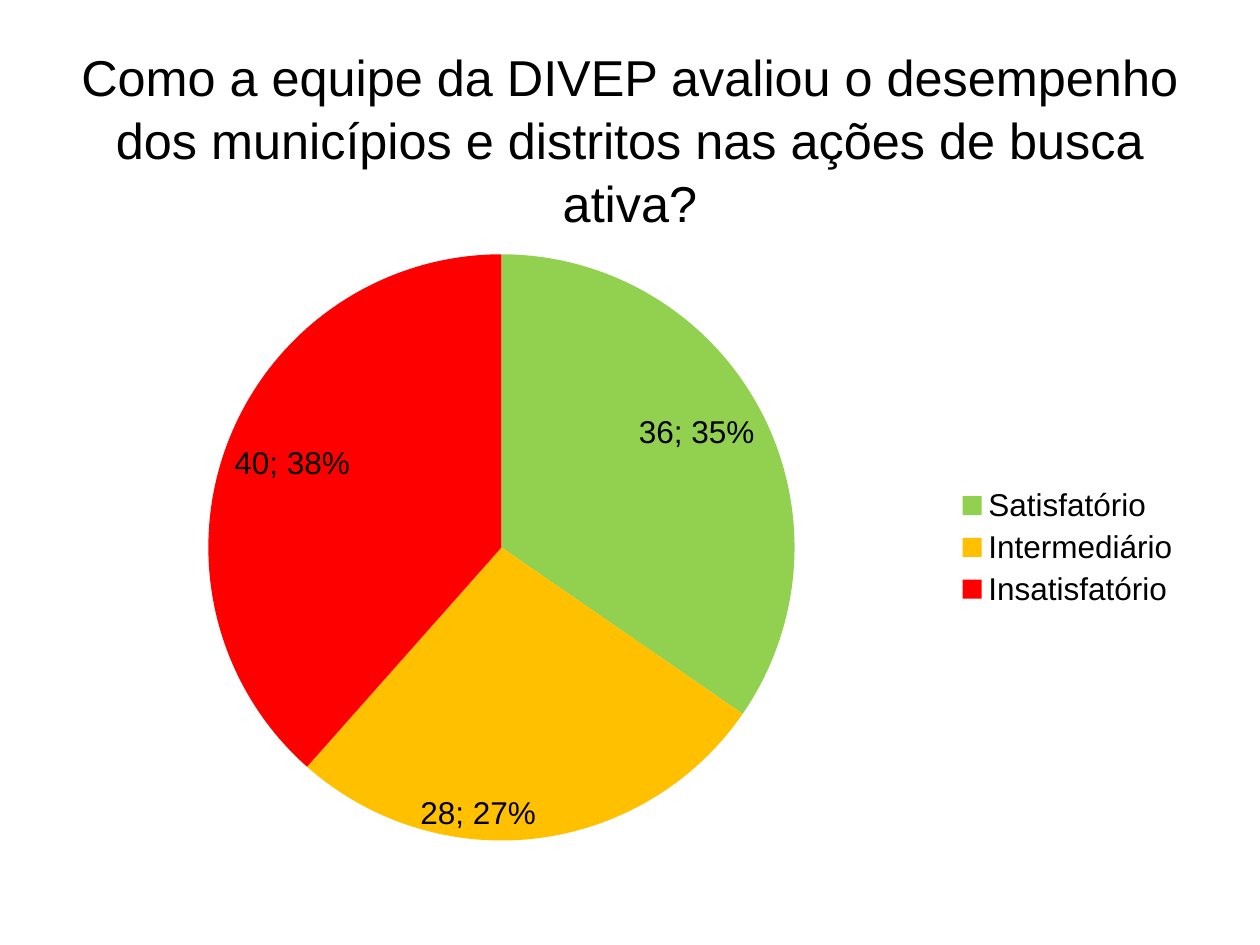
from dataclasses import dataclass

import pptx
import pptx.chart.data
import pptx.dml.color
import pptx.enum.chart
import pptx.enum.text
import pptx.oxml
import pptx.oxml.ns
import pptx.util

Inches = pptx.util.Inches


@dataclass(frozen=True)
class Theme:
    font: str = "Arial"
    text: str = "000000"
    title_size: float = 28.8
    chart_size: float = 18


THEME = Theme()
TITLE = ("Como a equipe da DIVEP avaliou o desempenho dos municípios "
         "e distritos nas ações de busca ativa?")
# Rating: (count, slice colour)
RATINGS = {
    "Satisfatório": (36, "92D050"),
    "Intermediário": (28, "FFC000"),
    "Insatisfatório": (40, "FF0000"),
}
# Plot area as fractions of the chart frame
PLOT_LAYOUT = {"x": 0.13, "y": 0.03, "w": 0.52, "h": 0.94}


def rgb(value):
    return pptx.dml.color.RGBColor.from_string(value)


def style_font(font, size):
    font.name = THEME.font
    font.size = pptx.util.Pt(size)
    font.color.rgb = rgb(THEME.text)


def add_title(page, text):
    box = page.shapes.add_textbox(Inches(0.5), Inches(0.3), Inches(9), Inches(1.25))
    frame = box.text_frame
    frame.word_wrap = True
    frame.vertical_anchor = pptx.enum.text.MSO_ANCHOR.TOP
    para = frame.paragraphs[0]
    para.text = text
    para.alignment = pptx.enum.text.PP_ALIGN.CENTER
    para.line_spacing = 1.04
    style_font(para.font, THEME.title_size)


def place_plot(chart, fractions):
    """Fix the inner plot area so that the pie keeps its size."""
    plot_area = chart.plots[0]._element.getparent()
    for old in plot_area.findall(pptx.oxml.ns.qn("c:layout")):
        plot_area.remove(old)
    sides = "".join(f'<c:{key} val="{value}"/>' for key, value in fractions.items())
    plot_area.insert(0, pptx.oxml.parse_xml(
        f'<c:layout {pptx.oxml.ns.nsdecls("c")}><c:manualLayout>'
        '<c:layoutTarget val="inner"/><c:xMode val="edge"/><c:yMode val="edge"/>'
        f'{sides}</c:manualLayout></c:layout>'))


def add_labels(plot):
    plot.has_data_labels = True
    labels = plot.data_labels
    labels.show_value = True
    labels.show_percentage = True
    labels.position = pptx.enum.chart.XL_LABEL_POSITION.INSIDE_END
    style_font(labels.font, THEME.chart_size)
    # The separator belongs just after showBubbleSize
    separator = pptx.oxml.parse_xml(
        f'<c:separator {pptx.oxml.ns.nsdecls("c")}>; </c:separator>')
    labels._element.find(pptx.oxml.ns.qn("c:showBubbleSize")).addnext(separator)


def add_pie(page, ratings):
    data = pptx.chart.data.CategoryChartData()
    data.categories = list(ratings)
    data.add_series("Series 1", [count for count, _ in ratings.values()])
    chart = page.shapes.add_chart(
        pptx.enum.chart.XL_CHART_TYPE.PIE,
        Inches(0.47), Inches(1.87), Inches(9), Inches(4.95), data).chart
    chart.has_title = False
    style_font(chart.font, THEME.chart_size)

    # Legend
    chart.has_legend = True
    chart.legend.position = pptx.enum.chart.XL_LEGEND_POSITION.RIGHT
    chart.legend.include_in_layout = False
    style_font(chart.legend.font, THEME.chart_size)

    # Slices and labels
    plot = chart.plots[0]
    plot.vary_by_categories = True
    for index, (_, color) in enumerate(ratings.values()):
        fill = plot.series[0].points[index].format.fill
        fill.solid()
        fill.fore_color.rgb = rgb(color)
    add_labels(plot)
    place_plot(chart, PLOT_LAYOUT)


def main():
    deck = pptx.Presentation()
    deck.slide_width, deck.slide_height = Inches(10), Inches(7.5)
    page = deck.slides.add_slide(deck.slide_layouts[6])
    add_title(page, TITLE)
    add_pie(page, RATINGS)
    deck.save("out.pptx")


if __name__ == "__main__":
    main()
